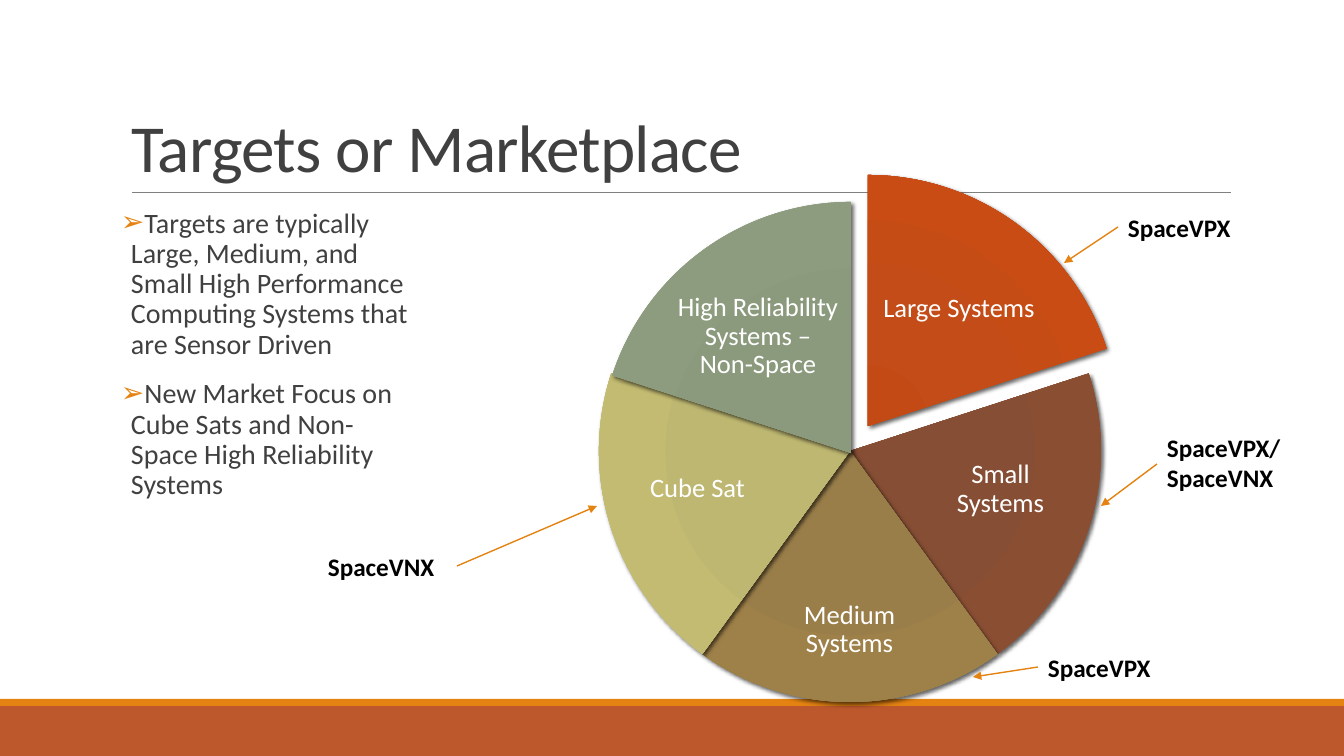
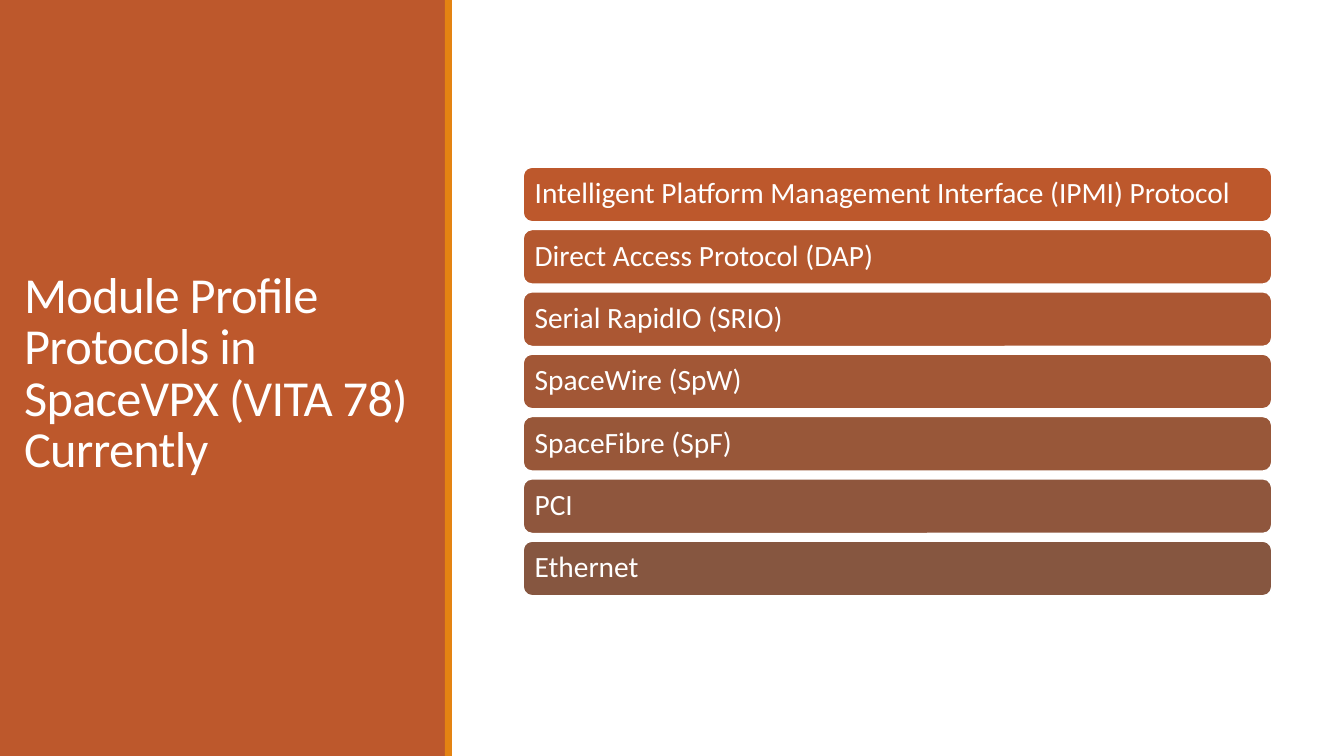
import pptx
import pptx.dml.color
import pptx.enum.shapes
import pptx.enum.text
import pptx.oxml
import pptx.oxml.ns
import pptx.util
import lxml.etree

MSO_SHAPE = pptx.enum.shapes.MSO_SHAPE
ANCHOR = pptx.enum.text.MSO_ANCHOR
ALIGN = pptx.enum.text.PP_ALIGN
AUTO_SIZE = pptx.enum.text.MSO_AUTO_SIZE
qn = pptx.oxml.ns.qn

WIDTH, HEIGHT = 1344, 756
SCALE = 12192000 / WIDTH
FONT = "Calibri"
COLORS = {
    "rust": "BD582C", "orange": "E48312", "brown": "865640", "rule": "808080",
    "text": "404040", "white": "FFFFFF", "black": "000000",
}
GRADIENT_STOPS = (0, 34, 70, 100)
TURN = 216
SLICES = [
    ("Large Systems", (18, -25), (275, 50, 170, 117), ("C44A15", "C34C18", "C94C15", "C45525")),
    ("Small Systems", (0, 0), (327, 226, 149, 126), ("874C32", "864E34", "8A4E33", "8A553D")),
    ("Medium Systems", (0, 0), (161, 376, 179, 108), ("9A7D48", "9A7E4A", "9E8049", "9E8454")),
    ("Cube Sat", (0, 0), (24, 226, 149, 126), ("BEB76E", "BEB771", "C3BB71", "C5BF7D")),
    ("High Reliability Systems – Non-Space", (1, 2), (74, 78, 170, 117),
     ("8A987B", "8B997D", "8D9C7E", "94A187")),
]
CALLOUTS = [
    ("SpaceVNX", (-281, 346, 128, 40), (-142, 366), (-2, 306)),
    ("SpaceVPX", (519, 7, 124, 40), (519, 27), (465, 63)),
    ("SpaceVPX", (439, 447, 124, 40), (439, 467), (374, 477)),
    ("SpaceVPX/\nSpaceVNX", (558, 227, 135, 72), (558, 264), (502, 306)),
]
TARGETS = [
    "Targets are typically Large, Medium, and Small High Performance Computing Systems that "
    "are Sensor Driven",
    "New Market Focus on Cube Sats and Non-Space High Reliability Systems",
]
PROTOCOLS = [
    "Intelligent Platform Management Interface (IPMI) Protocol",
    "Direct Access Protocol (DAP)",
    "Serial RapidIO (SRIO)",
    "SpaceWire (SpW)",
    "SpaceFibre (SpF)",
    "PCI",
    "Ethernet",
]


def px(*lengths):
    """Turn px lengths into a list of EMU."""
    return [pptx.util.Emu(round(length * SCALE)) for length in lengths]


def rgb(value):
    """Turn a hex string into a colour."""
    return pptx.dml.color.RGBColor.from_string(value)


def blend(start, end, share):
    """Mix two hex colours by a share from 0 to 1."""
    pairs = zip(rgb(start), rgb(end))
    return "".join(f"{round(a + (b - a) * share):02X}" for a, b in pairs)


def place(part, box):
    """Move a part to a px box."""
    part.left, part.top, part.width, part.height = px(*box)


def style_text(frame, size, color, bold=False, align=ALIGN.LEFT, spacing=None, tracking=None):
    """Format every paragraph and run of a text frame."""
    for paragraph in frame.paragraphs:
        paragraph.alignment = align
        if spacing:
            paragraph.line_spacing = spacing
        for run in paragraph.runs:
            run.font.name = FONT
            run.font.size = pptx.util.Pt(size)
            run.font.bold = bold
            run.font.color.rgb = rgb(color)
            if tracking:
                run.font._element.set("spc", str(tracking))


def set_insets(frame, across, down):
    """Set the inner margins of a text frame in px."""
    frame.margin_left = frame.margin_right = px(across)[0]
    frame.margin_top = frame.margin_bottom = px(down)[0]


def add_block(slide, kind, box, color):
    """Add a flat preset shape without outline or shadow."""
    block = slide.shapes.add_shape(kind, *px(*box))
    block.shadow.inherit = False
    block.fill.solid()
    block.fill.fore_color.rgb = rgb(color)
    block.line.fill.background()
    return block


def add_line(slide, start, end, color, width, arrow=False):
    """Add a straight line, with an arrowhead at its end if asked."""
    line = slide.shapes.add_connector(
        pptx.enum.shapes.MSO_CONNECTOR.STRAIGHT, *px(*start, *end))
    line.line.color.rgb = rgb(color)
    line.line.width = pptx.util.Pt(width)
    properties = line._element.spPr
    lxml.etree.SubElement(properties, qn("a:effectLst"))
    if arrow:
        lxml.etree.SubElement(properties.find(qn("a:ln")), qn("a:tailEnd"), type="triangle")


def set_title(slide, text, box, size, color, anchor):
    """Place and format the title placeholder."""
    title = slide.shapes.title
    place(title, box)
    frame = title.text_frame
    frame.text = text
    frame.word_wrap = True
    frame.auto_size = AUTO_SIZE.NONE
    frame.vertical_anchor = anchor
    style_text(frame, size, color, spacing=0.85, tracking=-50)


def add_footer_bands(slide, top):
    """Draw the thin and thick bands across the foot of the slide."""
    add_block(slide, MSO_SHAPE.RECTANGLE, (0, top + 7, WIDTH, HEIGHT - top - 7), COLORS["rust"])
    add_block(slide, MSO_SHAPE.RECTANGLE, (0, top, WIDTH, 7), COLORS["orange"])


def fill_targets(slide, box):
    """Fill the body placeholder with the arrow-bulleted targets."""
    body = slide.placeholders[1]
    place(body, box)
    frame = body.text_frame
    frame.text = "\n".join(TARGETS)
    frame.word_wrap = True
    frame.auto_size = AUTO_SIZE.NONE
    frame.vertical_anchor = ANCHOR.TOP
    set_insets(frame, 0, 5)
    style_text(frame, 20, COLORS["text"], spacing=0.9)
    for paragraph in frame.paragraphs:
        paragraph.space_before = pptx.util.Pt(12)
        paragraph.space_after = pptx.util.Pt(2)
        properties = paragraph._element.get_or_add_pPr()
        indent = px(10)[0]
        properties.set("marL", str(indent))
        properties.set("indent", str(-indent))
        bullet_color = lxml.etree.SubElement(properties, qn("a:buClr"))
        lxml.etree.SubElement(bullet_color, qn("a:srgbClr"), val=COLORS["orange"])
        lxml.etree.SubElement(properties, qn("a:buFont"), typeface=FONT)
        lxml.etree.SubElement(properties, qn("a:buChar"), char="➢")


def shade_slice(pie_slice, shades):
    """Give a slice its radial gradient and soft shadow."""
    pie_slice.fill.gradient()
    properties = pie_slice._element.spPr
    gradient = properties.find(qn("a:gradFill"))
    stops = "".join(
        f'<a:gs pos="{stop * 1000}"><a:srgbClr val="{shade}"/></a:gs>'
        for stop, shade in zip(GRADIENT_STOPS, shades))
    properties.replace(gradient, pptx.oxml.parse_xml(
        f'<a:gradFill {pptx.oxml.ns.nsdecls("a")} rotWithShape="1"><a:gsLst>{stops}</a:gsLst>'
        '<a:path path="circle"><a:fillToRect l="100000" t="100000" r="100000" b="100000"/>'
        '</a:path></a:gradFill>'))
    properties.find(qn("a:effectLst")).append(pptx.oxml.parse_xml(
        f'<a:outerShdw {pptx.oxml.ns.nsdecls("a")} blurRad="38100" dist="25400" dir="2700000">'
        f'<a:srgbClr val="{COLORS["black"]}"><a:alpha val="60000"/></a:srgbClr></a:outerShdw>'))


def add_market_pie(slide, box):
    """Draw equal slices clockwise from the top, each with its label."""
    left, top, width, height = box
    sweep = TURN / len(SLICES)
    for index, (name, shift, label_box, shades) in enumerate(SLICES):
        slice_box = (left + shift[0], top + shift[1], width, height)
        pie_slice = add_block(slide, MSO_SHAPE.PIE, slice_box, shades[0])
        start = TURN * 0.75 + index * sweep
        pie_slice.adjustments[0] = round(start % TURN, 2)
        pie_slice.adjustments[1] = round((start + sweep) % TURN, 2)
        shade_slice(pie_slice, shades)
        x, y, label_width, label_height = label_box
        label = slide.shapes.add_textbox(*px(left + x, top + y, label_width, label_height))
        frame = label.text_frame
        frame.text = name
        frame.word_wrap = True
        frame.vertical_anchor = ANCHOR.MIDDLE
        set_insets(frame, 3, 3)
        style_text(frame, 19, COLORS["white"], align=ALIGN.CENTER, spacing=0.9)


def add_callouts(slide, box):
    """Name the standard of each slice, with an arrow to the pie."""
    left, top = box[:2]
    for standard, (x, y, width, height), start, end in CALLOUTS:
        callout = slide.shapes.add_textbox(*px(left + x, top + y, width, height))
        frame = callout.text_frame
        frame.text = standard
        frame.word_wrap = False
        frame.auto_size = AUTO_SIZE.SHAPE_TO_FIT_TEXT
        style_text(frame, 18, COLORS["black"], bold=True)
        add_line(slide, (left + start[0], top + start[1]), (left + end[0], top + end[1]),
                 COLORS["orange"], 1, arrow=True)


def add_sidebar(slide, box):
    """Draw the coloured side panel, its edge and the title on it."""
    left, top, width, height = box
    add_block(slide, MSO_SHAPE.RECTANGLE, box, COLORS["rust"])
    add_block(slide, MSO_SHAPE.RECTANGLE, (left + width - 1, top, 7, height), COLORS["orange"])
    title = slide.shapes.title
    slide.shapes._spTree.append(title._element)
    set_title(slide, "Module Profile Protocols in SpaceVPX (VITA 78) Currently",
              (left + 14, top + 57, 419, 636), 36, COLORS["white"], ANCHOR.MIDDLE)


def add_protocol_bars(slide, box):
    """Stack one bar per protocol, fading from rust to brown."""
    left, top, width, height = box
    bar_height = 55
    last = len(PROTOCOLS) - 1
    pitch = (height - bar_height) / last
    for index, protocol in enumerate(PROTOCOLS):
        color = blend(COLORS["rust"], COLORS["brown"], index / last)
        bar = add_block(slide, MSO_SHAPE.ROUNDED_RECTANGLE,
                        (left, top + index * pitch, width, bar_height), color)
        bar.line.color.rgb = rgb(COLORS["white"])
        bar.line.width = pptx.util.Pt(1.25)
        frame = bar.text_frame
        frame.text = protocol
        frame.word_wrap = True
        frame.vertical_anchor = ANCHOR.MIDDLE
        set_insets(frame, 9, 9)
        style_text(frame, 21, COLORS["white"], spacing=0.9)


def build_marketplace(deck):
    """Build the slide with the targets and the market pie."""
    slide = deck.slides.add_slide(deck.slide_layouts[1])
    add_footer_bands(slide, 699)
    add_line(slide, (132, 192), (1231, 192), COLORS["rule"], 0.5)
    set_title(slide, "Targets or Marketplace", (121, 31, 1109, 160), 48,
              COLORS["text"], ANCHOR.BOTTOM)
    fill_targets(slide, (121, 204, 289, 444))
    pie_box = (599, 200, 502, 502)
    add_market_pie(slide, pie_box)
    add_callouts(slide, pie_box)


def build_protocols(deck):
    """Build the slide with the side title and the protocol bars."""
    slide = deck.slides.add_slide(deck.slide_layouts[5])
    add_sidebar(slide, (0, 0, 446, HEIGHT))
    add_protocol_bars(slide, (523, 167, 749, 429))


def main():
    """Build and save the presentation."""
    deck = pptx.Presentation()
    deck.slide_width, deck.slide_height = px(WIDTH, HEIGHT)
    build_marketplace(deck)
    build_protocols(deck)
    deck.save("out.pptx")


if __name__ == "__main__":
    main()
